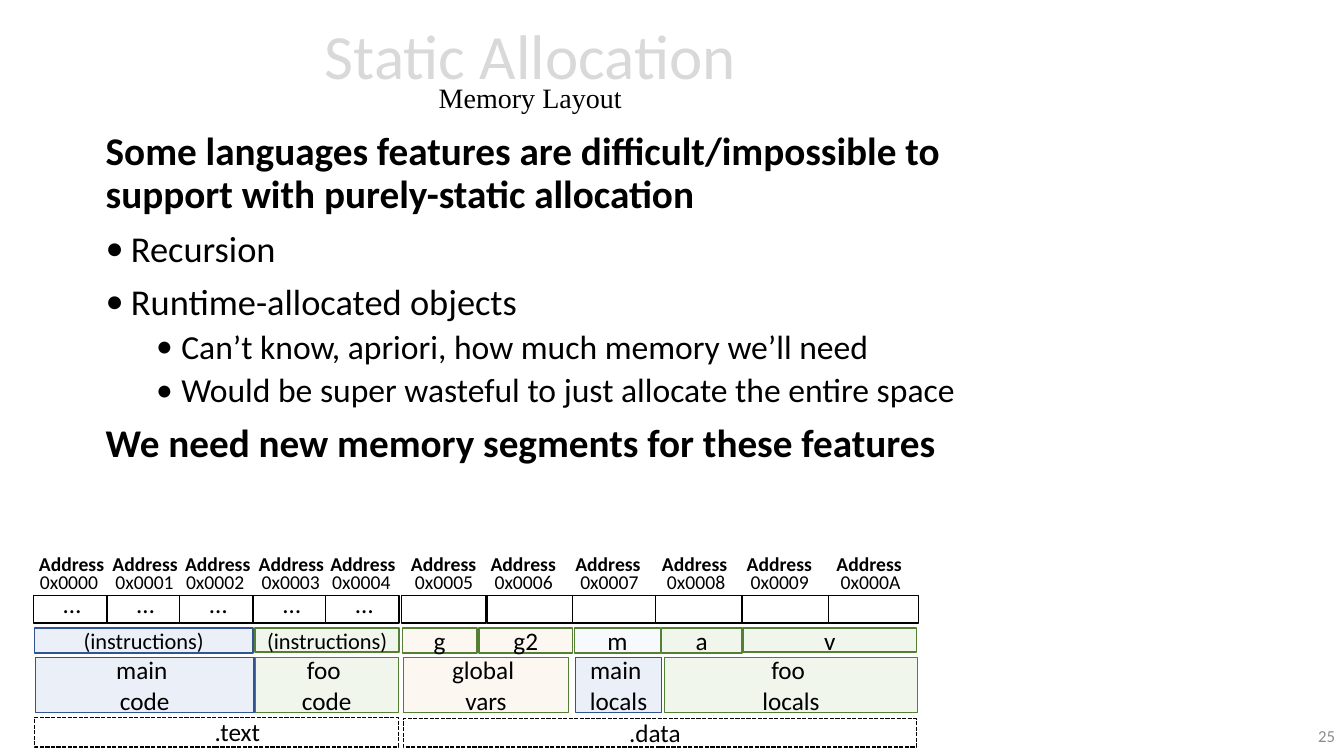
"""Build the static allocation slide with its memory layout diagram."""
from typing import NamedTuple, Optional

from lxml import etree
from pptx import Presentation
from pptx.dml.color import RGBColor
from pptx.enum.dml import MSO_LINE
from pptx.enum.shapes import MSO_SHAPE
from pptx.enum.text import MSO_ANCHOR, MSO_AUTO_SIZE, PP_ALIGN
from pptx.oxml.ns import qn
from pptx.shapes.autoshape import Shape
from pptx.util import Inches, Pt

RECT = MSO_SHAPE.RECTANGLE
DASH = MSO_LINE.SQUARE_DOT
MID, TOP = MSO_ANCHOR.MIDDLE, MSO_ANCHOR.TOP
FIT = MSO_AUTO_SIZE.SHAPE_TO_FIT_TEXT
LEFT, MIDST, RIGHT = PP_ALIGN.LEFT, PP_ALIGN.CENTER, PP_ALIGN.RIGHT

FONT = "Calibri"
BLACK = RGBColor(0x00, 0x00, 0x00)
WHITE = RGBColor(0xFF, 0xFF, 0xFF)
PALE = RGBColor(0xD9, 0xD9, 0xD9)
GRAY = RGBColor(0x8C, 0x8C, 0x8C)
GREEN = RGBColor(0x70, 0xAD, 0x47)
BLUE = RGBColor(0x44, 0x72, 0xC4)
PEACH = RGBColor(0xF4, 0xB1, 0x83)
SKY = RGBColor(0xB4, 0xC7, 0xE7)
MOSS = RGBColor(0x53, 0x80, 0x35)
NAVY = RGBColor(0x32, 0x54, 0x91)


class Item(NamedTuple):
    text: str
    size: int
    indent: float = 0
    level: int = 0
    bold: bool = False


class Cell(NamedTuple):
    index: int
    left: float
    width: float
    head: float
    code: float
    dots: bool = False


class Block(NamedTuple):
    lines: tuple[str, ...]
    left: float
    top: float
    width: float
    height: float
    fill: RGBColor
    edge: RGBColor = MOSS
    size: int = 18


class Segment(NamedTuple):
    name: str
    left: float
    top: float
    width: float
    height: float
    label: float
    room: float


ITEMS = (
    Item("Some languages features are difficult/impossible to "
         "support with purely-static allocation", 28, bold=True),
    Item("Recursion", 26, 0.25),
    Item("Runtime-allocated objects", 26, 0.25),
    Item("Can’t know, apriori, how much memory we’ll need", 24, 0.75, 1),
    Item("Would be super wasteful to just allocate the entire space", 24, 0.75, 1),
    Item("We need new memory segments for these features", 28, bold=True),
)

CELLS = (
    Cell(5, 3.98, 0.84, 4.01, 4.09),
    Cell(7, 5.64, 0.93, 5.64, 5.73),
    Cell(8, 6.5, 0.93, 6.5, 6.59),
    Cell(9, 7.36, 0.93, 7.34, 7.42),
    Cell(10, 8.22, 0.89, 8.23, 8.32),
    Cell(6, 4.83, 0.85, 4.8, 4.88),
    Cell(0, 0.33, 0.73, 0.32, 0.37, True),
    Cell(1, 1.06, 0.73, 1.05, 1.12, True),
    Cell(2, 1.78, 0.73, 1.77, 1.82, True),
    Cell(3, 2.51, 0.73, 2.5, 2.57, True),
    Cell(4, 3.23, 0.73, 3.21, 3.27, True),
)

BLOCKS = (
    Block(("foo ", "code"), 2.53, 6.52, 1.42, 0.55, GREEN),
    Block(("main ", "code"), 0.35, 6.52, 2.17, 0.55, BLUE, NAVY),
    Block(("global ", "vars"), 4, 6.52, 1.64, 0.55, PEACH),
    Block(("g",), 3.99, 6.23, 0.74, 0.25, PEACH),
    Block(("g2",), 4.75, 6.23, 0.93, 0.25, PEACH),
    Block(("main ", "locals"), 5.71, 6.52, 0.85, 0.55, BLUE, NAVY),
    Block(("m",), 5.7, 6.23, 0.85, 0.25, SKY),
    Block(("foo ", "locals"), 6.59, 6.52, 2.51, 0.55, GREEN),
    Block(("a",), 6.56, 6.23, 0.8, 0.25, GREEN),
    Block(("v",), 7.37, 6.23, 1.72, 0.24, GREEN),
    Block(("(instructions)",), 0.34, 6.23, 2.17, 0.25, BLUE, NAVY, 16),
    Block(("(instructions)",), 2.53, 6.23, 1.43, 0.24, GREEN, MOSS, 16),
)

SEGMENTS = (
    Segment(".text", 0.34, 7.12, 3.61, 0.29, 2.03, 0.7),
    Segment(".data", 4, 7.13, 5.09, 0.28, 6.14, 0.75),
)


def add_run(para, text: str, size: float, color: RGBColor = BLACK,
            bold: bool = False, font: str = FONT) -> None:
    """Append one styled run to a paragraph."""
    run = para.add_run()
    run.text = text
    run.font.name, run.font.size = font, Pt(size)
    run.font.bold, run.font.color.rgb = bold, color


def add_box(slide, left: float, top: float, width: float, height: float,
            align=LEFT, anchor=TOP, wrap: bool = True) -> Shape:
    """Add an empty text box."""
    box = slide.shapes.add_textbox(*map(Inches, (left, top, width, height)))
    frame = box.text_frame
    frame.word_wrap, frame.vertical_anchor = wrap, anchor
    frame.paragraphs[0].alignment = align
    return box


def add_label(slide, text: str, left: float, top: float, width: float,
              height: float, size: int = 18, bold: bool = False,
              tight: bool = False) -> None:
    """Add a one-line label, centred without side insets when tight."""
    box = add_box(slide, left, top, width, height, MIDST if tight else LEFT, wrap=tight)
    frame = box.text_frame
    frame.auto_size = FIT
    if tight:
        frame.margin_left = frame.margin_right = 0
    add_run(frame.paragraphs[0], text, size, bold=bold)


def add_rect(slide, left: float, top: float, width: float, height: float,
             fill: Optional[RGBColor] = None, edge: RGBColor = BLACK) -> Shape:
    """Add an outlined rectangle, hollow when no fill is given."""
    rect = slide.shapes.add_shape(RECT, *map(Inches, (left, top, width, height)))
    rect.shadow.inherit = False
    rect.line.color.rgb, rect.line.width = edge, Pt(1)
    if fill is None:
        rect.fill.background()
    else:
        rect.fill.solid()
        rect.fill.fore_color.rgb = fill
    return rect


def add_block(slide, block: Block) -> None:
    """Add a tinted block with centred lines."""
    rect = add_rect(slide, *block[1:7])
    tint = rect.fill._xPr.find(qn("a:solidFill"))[0]
    etree.SubElement(tint, qn("a:alpha")).set("val", "10000")
    frame = rect.text_frame
    frame.word_wrap, frame.vertical_anchor = True, MID
    for spot, line in enumerate(block.lines):
        para = frame.add_paragraph() if spot else frame.paragraphs[0]
        para.alignment = MIDST
        add_run(para, line, block.size)


def add_cell(slide, cell: Cell) -> None:
    """Add a memory cell with its address above."""
    add_rect(slide, cell.left, 5.91, cell.width, 0.27, WHITE)
    add_label(slide, "Address", cell.head, 5.43, 0.78, 0.34, 14, True, True)
    add_label(slide, f"0x{cell.index:04X}", cell.code, 5.6, 0.63, 0.35, 14, tight=True)
    if cell.dots:
        add_label(slide, "…", cell.left + 0.2, 5.79, 0.38, 0.4)


def add_body(slide) -> None:
    """Add the main points."""
    frame = add_box(slide, 0.95, 1.26, 9.31, 4.76).text_frame
    for spot, item in enumerate(ITEMS):
        para = frame.add_paragraph() if spot else frame.paragraphs[0]
        para.level, para.line_spacing = item.level, 0.9
        para.space_before = Pt(5 if item.level else 10)
        if item.indent:
            props = para._p.get_or_add_pPr()
            props.set("marL", str(Inches(item.indent)))
            props.set("indent", str(Inches(-0.25)))
            etree.SubElement(props, qn("a:buFont")).set("typeface", FONT)
            etree.SubElement(props, qn("a:buChar")).set("char", "•")
        add_run(para, item.text, item.size, bold=item.bold)


def main() -> None:
    """Draw and save the slide."""
    deck = Presentation()
    deck.slide_width, deck.slide_height = Inches(13.33), Inches(7.5)
    slide = deck.slides.add_slide(deck.slide_layouts[6])
    title = add_box(slide, 0.26, 0.02, 10, 1.45, MIDST, MID).text_frame.paragraphs[0]
    title.line_spacing = 0.7
    add_run(title, "Static Allocation", 45, PALE)
    title.add_line_break()
    add_run(title, "Memory Layout", 20, font="Times New Roman")
    page = add_box(slide, 10.34, 7.1, 3, 0.4, RIGHT, MID)
    add_run(page.text_frame.paragraphs[0], "25", 12, GRAY)
    add_body(slide)
    for cell in CELLS:
        add_cell(slide, cell)
    for part in SEGMENTS:
        add_rect(slide, *part[1:5]).line.dash_style = DASH
        add_label(slide, part.name, part.label, part.top - 0.06, part.room, 0.4)
    for block in BLOCKS:
        add_block(slide, block)
    deck.save("out.pptx")


if __name__ == "__main__":
    main()
